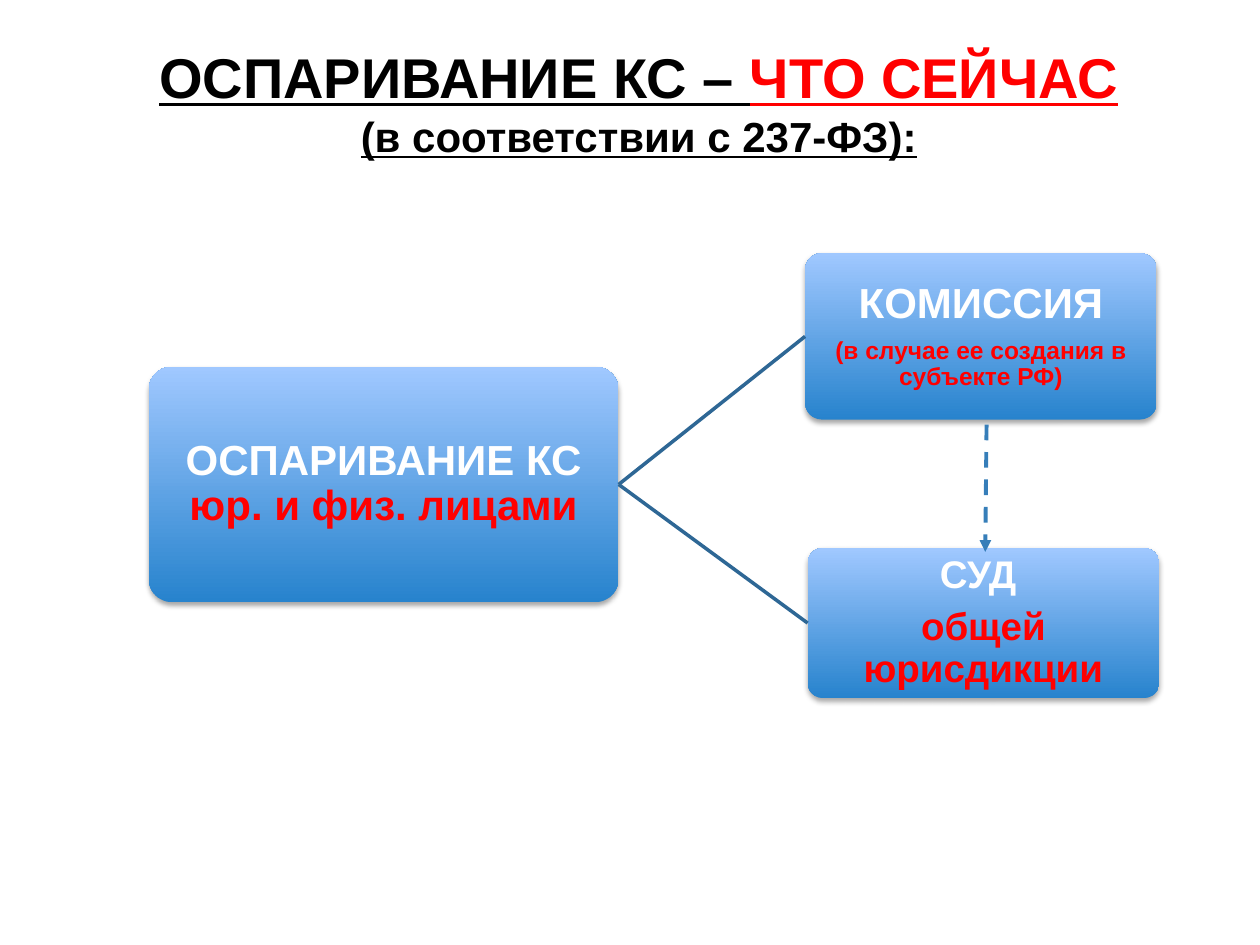
from dataclasses import dataclass

from lxml import etree
from pptx import Presentation
from pptx.dml.color import RGBColor
from pptx.enum.dml import MSO_LINE
from pptx.enum.shapes import MSO_CONNECTOR, MSO_SHAPE
from pptx.enum.text import MSO_ANCHOR, MSO_AUTO_SIZE, PP_ALIGN
from pptx.oxml import parse_xml
from pptx.oxml.ns import nsdecls, qn
from pptx.shapes.autoshape import Shape
from pptx.shapes.connector import Connector
from pptx.slide import Slide
from pptx.text.text import TextFrame
from pptx.util import Inches, Pt

ROUNDED = MSO_SHAPE.ROUNDED_RECTANGLE
STRAIGHT = MSO_CONNECTOR.STRAIGHT
DASH = MSO_LINE.DASH
CENTER = PP_ALIGN.CENTER
TOP = MSO_ANCHOR.TOP
MIDDLE = MSO_ANCHOR.MIDDLE
NO_AUTOFIT = MSO_AUTO_SIZE.NONE

BLACK = RGBColor(0x00, 0x00, 0x00)
WHITE = RGBColor(0xFF, 0xFF, 0xFF)
RED = RGBColor(0xFF, 0x00, 0x00)
DEEP_BLUE = RGBColor(0x27, 0x83, 0xCD)
LIGHT_BLUE = RGBColor(0xA0, 0xC8, 0xFF)
BRANCH_BLUE = RGBColor(0x2E, 0x67, 0x95)
ARROW_BLUE = RGBColor(0x36, 0x7E, 0xB9)

FONT = "Arial"
LEFT_SITE, RIGHT_SITE = 1, 3


@dataclass(frozen=True)
class Phrase:
    text: str
    size: int
    color: RGBColor


@dataclass(frozen=True)
class Box:
    left: float
    top: float
    width: float
    height: float
    lines: list[list[Phrase]]


TITLE_LINES = [
    [Phrase("ОСПАРИВАНИЕ КС – ", 32, BLACK), Phrase("ЧТО СЕЙЧАС", 32, RED)],
    [Phrase("(в соответствии с 237-ФЗ):", 24, BLACK)],
]
DISPUTE = Box(1.18, 2.91, 3.73, 1.87, [
    [Phrase("ОСПАРИВАНИЕ КС ", 24, WHITE), Phrase("юр. и физ. лицами", 24, RED)],
])
AUTHORITIES = [
    Box(6.39, 2.01, 2.79, 1.32, [
        [Phrase("КОМИССИЯ", 24, WHITE)],
        [Phrase("(в случае ее создания в субъекте РФ)", 14, RED)],
    ]),
    Box(6.41, 4.35, 2.79, 1.19, [
        [Phrase("СУД ", 22, WHITE)],
        [Phrase("общей юрисдикции", 22, RED)],
    ]),
]


def write_lines(frame: TextFrame, lines: list[list[Phrase]], spacing: float,
                after: int, underline: bool = False) -> None:
    frame.word_wrap = True
    frame.auto_size = NO_AUTOFIT
    for index, phrases in enumerate(lines):
        paragraph = frame.add_paragraph() if index else frame.paragraphs[0]
        paragraph.alignment = CENTER
        paragraph.line_spacing = spacing
        paragraph.space_before = Pt(0)
        paragraph.space_after = Pt(after)
        for phrase in phrases:
            run = paragraph.add_run()
            run.text = phrase.text
            run.font.name = FONT
            run.font.size = Pt(phrase.size)
            run.font.bold = True
            run.font.underline = underline
            run.font.color.rgb = phrase.color


def add_soft_shadow(shape: Shape) -> None:
    shape.shadow.inherit = False
    effects = shape.element.spPr.find(qn("a:effectLst"))
    effects.append(parse_xml(
        f'<a:outerShdw {nsdecls("a")} blurRad="{Pt(3.1)}" dist="{Pt(1.8)}" '
        'dir="5400000" rotWithShape="0"><a:srgbClr val="000000">'
        '<a:alpha val="35000"/></a:srgbClr></a:outerShdw>'
    ))


def add_box(slide: Slide, box: Box) -> Shape:
    shape = slide.shapes.add_shape(
        ROUNDED, Inches(box.left), Inches(box.top), Inches(box.width), Inches(box.height)
    )
    shape.adjustments[0] = 0.1
    shape.fill.gradient()
    shape.fill.gradient_angle = 90
    for stop, color in zip(shape.fill.gradient_stops, (DEEP_BLUE, LIGHT_BLUE)):
        stop.color.rgb = color
    shape.line.fill.background()
    add_soft_shadow(shape)
    frame = shape.text_frame
    frame.vertical_anchor = MIDDLE
    frame.margin_left = frame.margin_right = Inches(0.02)
    frame.margin_top = frame.margin_bottom = Inches(0.02)
    write_lines(frame, box.lines, spacing=0.9, after=6)
    return shape


def add_line(slide: Slide, start: tuple[float, float], end: tuple[float, float],
             color: RGBColor, width: float) -> Connector:
    line = slide.shapes.add_connector(STRAIGHT, *map(Inches, start + end))
    line.line.color.rgb = color
    line.line.width = Pt(width)
    etree.SubElement(line.element.spPr, qn("a:effectLst"))
    return line


def add_branch(slide: Slide, source: Shape, target: Shape) -> None:
    branch = add_line(slide, (0, 0), (1, 1), BRANCH_BLUE, 2)
    branch.begin_connect(source, RIGHT_SITE)
    branch.end_connect(target, LEFT_SITE)


def add_appeal_arrow(slide: Slide) -> None:
    arrow = add_line(slide, (7.83, 3.37), (7.82, 4.38), ARROW_BLUE, 2.25)
    arrow.line.dash_style = DASH
    etree.SubElement(arrow.line._get_or_add_ln(), qn("a:tailEnd"), type="triangle")


def add_title(slide: Slide) -> None:
    title = slide.shapes.title
    title.left, title.top = Inches(0.13), Inches(0.29)
    title.width, title.height = Inches(9.88), Inches(1.04)
    title.text_frame.vertical_anchor = TOP
    write_lines(title.text_frame, TITLE_LINES, spacing=1.0, after=0, underline=True)


def main() -> None:
    presentation = Presentation()
    presentation.slide_width = Inches(10)
    presentation.slide_height = Inches(7.5)
    slide = presentation.slides.add_slide(presentation.slide_layouts[5])
    add_title(slide)
    dispute = add_box(slide, DISPUTE)
    for authority in AUTHORITIES:
        add_branch(slide, dispute, add_box(slide, authority))
    add_appeal_arrow(slide)
    presentation.save("out.pptx")


if __name__ == "__main__":
    main()
